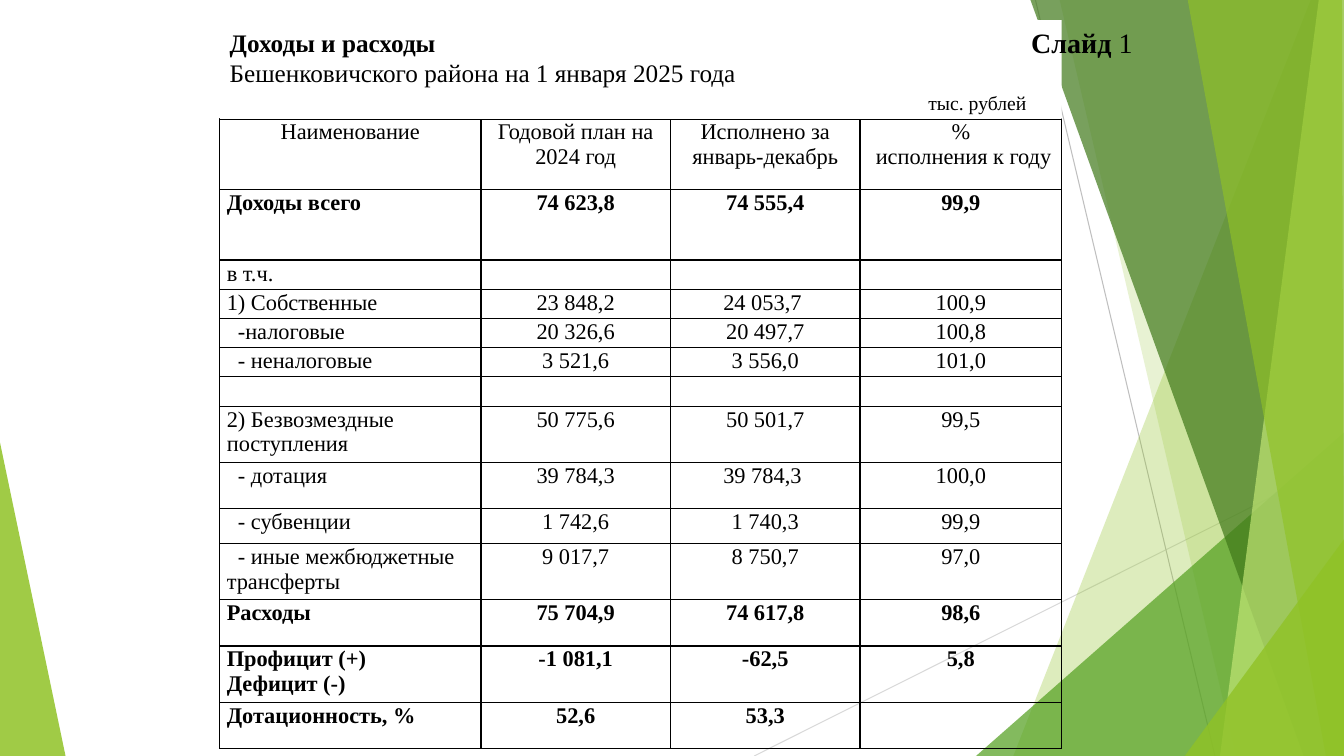
from lxml.etree import SubElement
from pptx import Presentation
from pptx.dml.color import RGBColor
from pptx.enum.shapes import MSO_CONNECTOR, MSO_SHAPE
from pptx.enum.text import MSO_ANCHOR, PP_ALIGN
from pptx.oxml.ns import qn
from pptx.util import Inches, Pt

FONT = "Times New Roman"
BLACK = "000000"
LEAF = "90C226"
WIDTH, HEIGHT = 13.33, 7.5

RAYS = [((7.48, 7.5), (13.33, 4.57), "D9D9D9"), ((10.27, 0), (12.05, 7.5), "BFBFBF")]
LEFT_FACET = [([(0, 4.39), (0.65, 7.5), (0, 7.5)], LEAF, 85)]
RIGHT_FACETS = [
    ([(13, 0), (10.05, 7.5), (13.33, 7.5), (13.33, 0)], LEAF, 30),
    ([(10.51, 0), (12.26, 7.5), (13.33, 7.5), (13.33, 0)], LEAF, 20),
    ([(9.68, 7.5), (13.33, 4.29), (13.33, 7.5)], "54A021", 72),
    ([(10.22, 0), (12.93, 7.5), (13.33, 7.5), (13.33, 0)], "3F7819", 70),
    ([(13.08, 0), (12.1, 7.5), (13.33, 7.5), (13.33, 0)], "C0E474", 70),
    ([(11.78, 0), (13.15, 7.5), (13.33, 7.5), (13.31, 0)], LEAF, 65),
    ([(11.75, 7.5), (13.33, 5.35), (13.33, 7.5)], LEAF, 80),
]

COLUMNS = [2.59, 1.88, 1.88, 2]
BUDGET = [
    (0.7, ["Наименование", "Годовой план на 2024 год",
           "Исполнено за январь-декабрь", "%\n исполнения к году"]),
    (0.7, ["Доходы всего", "74 623,8", "74 555,4", "99,9"]),
    (0.29, ["в т.ч.", "", "", ""]),
    (0.29, ["1) Собственные", "23 848,2", "24 053,7 ", "100,9"]),
    (0.29, ["-налоговые", "20 326,6", "20 497,7", "100,8"]),
    (0.29, ["- неналоговые", "3 521,6", "3 556,0", "101,0"]),
    (0.29, ["", "", "", ""]),
    (0.56, ["2) Безвозмездные поступления", "50 775,6", "50 501,7", "99,5"]),
    (0.46, ["- дотация", "39 784,3", "39 784,3 ", "100,0"]),
    (0.34, ["- субвенции", "1 742,6", "1 740,3", "99,9"]),
    (0.56, ["- иные межбюджетные трансферты", "9 017,7", "8 750,7", "97,0"]),
    (0.46, ["Расходы", "75 704,9", "74 617,8", "98,6"]),
    (0.56, ["Профицит (+)\nДефицит (-)", "-1 081,1", "-62,5", "5,8"]),
    (0.46, ["Дотационность, %", "52,6", "53,3", ""]),
]
BOLD_ROWS = {1, 11, 12, 13}


def color(value):
    return RGBColor.from_string(value)


def style(para, size, bold=False):
    para.font.name = FONT
    para.font.size = Pt(size)
    para.font.bold = bold
    para.font.color.rgb = color(BLACK)


def add_facets(page, facets):
    for points, fill, opacity in facets:
        corners = [(Inches(x), Inches(y)) for x, y in points]
        builder = page.shapes.build_freeform(*corners[0], scale=1.0)
        builder.add_line_segments(corners[1:], close=True)
        facet = builder.convert_to_shape()
        facet.shadow.inherit = False
        facet.line.fill.background()
        facet.fill.solid()
        facet.fill.fore_color.rgb = color(fill)
        tint = facet.fill._xPr.find(qn("a:solidFill"))[0]
        SubElement(tint, qn("a:alpha")).set("val", str(opacity * 1000))


def add_rays(page):
    for start, end, tone in RAYS:
        ray = page.shapes.add_connector(
            MSO_CONNECTOR.STRAIGHT, *map(Inches, start + end))
        ray.line.color.rgb = color(tone)
        ray.line.width = Pt(0.75)
        SubElement(ray._element.spPr, qn("a:effectLst"))


def add_borders(cell):
    properties = cell._tc.get_or_add_tcPr()
    for side in ("lnL", "lnR", "lnT", "lnB"):
        border = SubElement(properties, qn(f"a:{side}"), w=str(Pt(1)))
        fill = SubElement(border, qn("a:solidFill"))
        SubElement(fill, qn("a:srgbClr")).set("val", BLACK)


def fill_cell(cell, text, bold, centered):
    add_borders(cell)
    cell.fill.background()
    cell.margin_left = cell.margin_right = Inches(0.07)
    cell.margin_top, cell.margin_bottom = Inches(0.01), 0
    cell.text = text
    for para in cell.text_frame.paragraphs:
        style(para, 16, bold)
        para.alignment = PP_ALIGN.CENTER if centered else PP_ALIGN.LEFT
        if not centered and text.startswith("-"):
            para._p.get_or_add_pPr().set("indent", str(Inches(0.11)))


def add_budget(page, left, top, width, height):
    frame = page.shapes.add_table(len(BUDGET), len(COLUMNS), Inches(left),
                                  Inches(top), Inches(width), Inches(height))
    table = frame.table
    table.first_row = table.horz_banding = False
    for column, size in zip(table.columns, COLUMNS):
        column.width = Inches(size)
    for index, (size, texts) in enumerate(BUDGET):
        table.rows[index].height = Inches(size)
        for place, text in enumerate(texts):
            fill_cell(table.cell(index, place), text, index in BOLD_ROWS,
                      index == 0 or place > 0)


def add_heading(page, left, top, width, height):
    box = page.shapes.add_shape(MSO_SHAPE.RECTANGLE, Inches(left), Inches(top),
                                Inches(width), Inches(height))
    box.shadow.inherit = False
    box.fill.solid()
    box.fill.fore_color.rgb = color("FFFFFF")
    box.line.fill.background()
    frame = box.text_frame
    frame.word_wrap = True
    frame.vertical_anchor = MSO_ANCHOR.TOP
    frame.margin_top = Inches(0.07)
    frame.text = ("Доходы и расходы\n"
                  "Бешенковичского района на 1 января 2025 года\nтыс. рублей")
    for para, size, bold in zip(frame.paragraphs, (18, 18, 14), (True, False, False)):
        style(para, size, bold)
        para.alignment = PP_ALIGN.LEFT
    unit = frame.paragraphs[-1]
    unit.space_before = Pt(2)
    unit._p.get_or_add_pPr().set("marL", str(Inches(width - 1.42)))


def add_slide_label(page, left, top, width, height):
    box = page.shapes.add_textbox(Inches(left), Inches(top), Inches(width), Inches(height))
    box.text_frame.word_wrap = True
    para = box.text_frame.paragraphs[0]
    style(para, 20)
    for text, bold in (("Слайд", True), (" 1", False)):
        span = para.add_run()
        span.text = text
        span.font.bold = bold


def build_budget_slide(deck):
    page = deck.slides.add_slide(deck.slide_layouts[6])
    add_facets(page, LEFT_FACET)
    add_rays(page)
    add_facets(page, RIGHT_FACETS)
    add_budget(page, 2.18, 1.18, 8.35, 6.25)
    add_heading(page, 2.18, 0.2, 8.35, 0.98)
    add_slide_label(page, 10.13, 0.2, 1.34, 0.44)


def main():
    deck = Presentation()
    deck.slide_width, deck.slide_height = Inches(WIDTH), Inches(HEIGHT)
    build_budget_slide(deck)
    deck.save("out.pptx")


if __name__ == "__main__":
    main()
